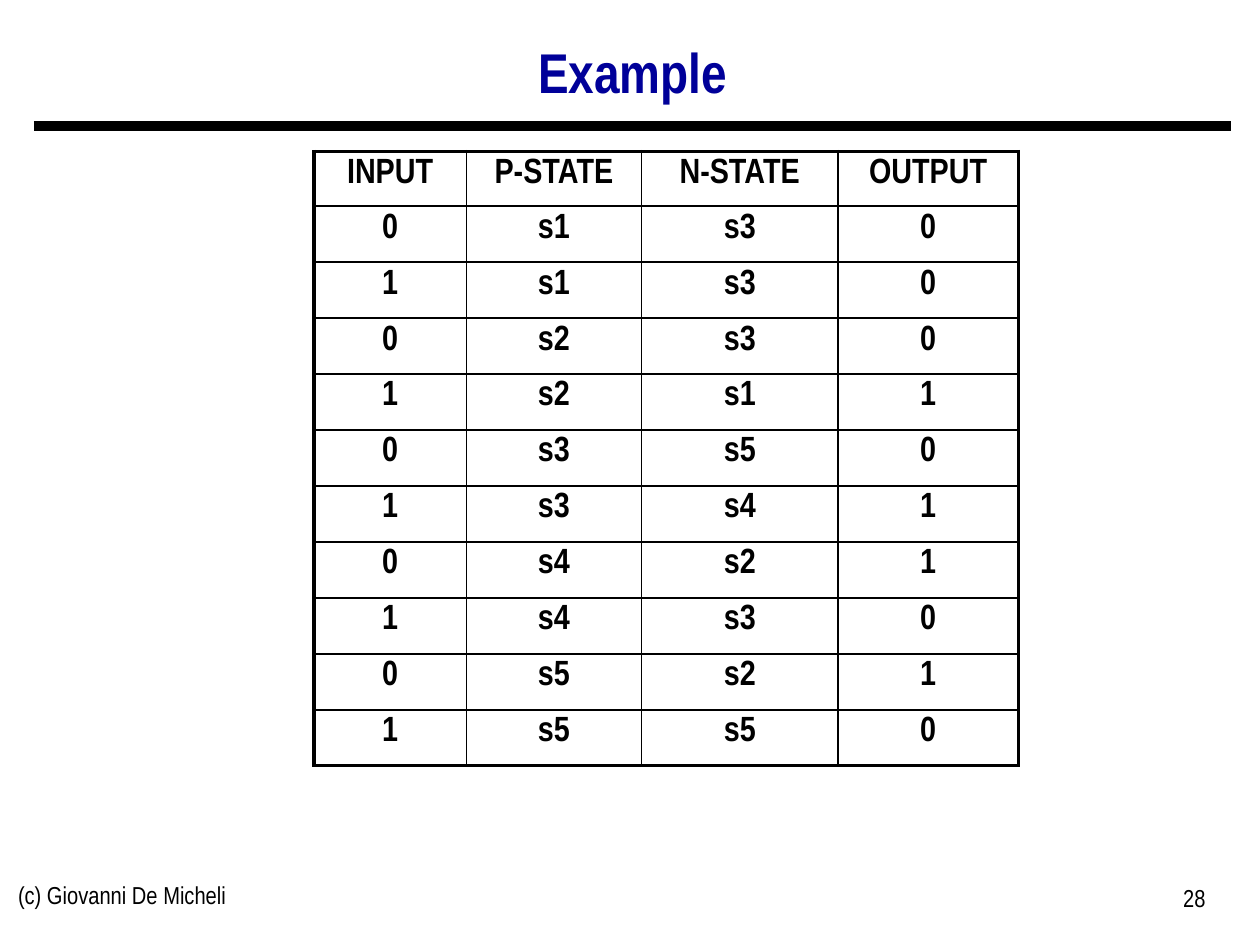
from lxml import etree
from pptx import Presentation
from pptx import util as u
from pptx.dml.color import RGBColor
from pptx.enum import shapes, text
from pptx.oxml.ns import qn

Pt = u.Pt
COLORS = {"ink": "000000", "title": "000099"}
FONT = "Arial Narrow"
LEFT, CENTER, RIGHT = text.PP_ALIGN.LEFT, text.PP_ALIGN.CENTER, text.PP_ALIGN.RIGHT


def write(tf, content, size=14, color="ink", bold=False, align=LEFT, spacing=None):
    p = tf.paragraphs[0]
    p.alignment = align
    if spacing:
        p.line_spacing = spacing
    r = p.add_run()
    r.text = content
    r.font.name, r.font.size, r.font.bold = FONT, Pt(size), bold
    r.font.color.rgb = RGBColor.from_string(COLORS[color])


class Deck:
    thin, thick = 1, 2.25

    def __init__(self, width, height):
        self.prs = Presentation()
        self.prs.slide_width, self.prs.slide_height = Pt(width), Pt(height)
        self.s = self.prs.slides.add_slide(self.prs.slide_layouts[6])

    def rule(self, x1, x2, y, width):
        sp = self.s.shapes.add_connector(
            shapes.MSO_CONNECTOR.STRAIGHT, Pt(x1), Pt(y), Pt(x2), Pt(y))
        sp.line.width = Pt(width)
        sp.line.color.rgb = RGBColor.from_string(COLORS["ink"])
        etree.SubElement(sp.line._get_or_add_ln().getparent(), qn("a:effectLst"))

    def label(self, box, content, anchor=text.MSO_ANCHOR.TOP, **fmt):
        tf = self.s.shapes.add_textbox(*map(Pt, box)).text_frame
        tf.word_wrap = True
        tf.vertical_anchor = anchor
        write(tf, content, **fmt)

    def border(self, cell, side, width):
        tc_pr = cell._tc.get_or_add_tcPr()
        ln = etree.SubElement(tc_pr, qn("a:ln" + side), w=str(Pt(width)))
        fill = etree.SubElement(ln, qn("a:solidFill"))
        etree.SubElement(fill, qn("a:srgbClr"), val=COLORS["ink"])

    def table(self, x, y, widths, heights, rows, **fmt):
        frame = self.s.shapes.add_table(
            len(rows), len(widths), Pt(x), Pt(y), Pt(sum(widths)), Pt(sum(heights)))
        tbl = frame.table
        tbl.first_row = tbl.horz_banding = False
        for col, width in zip(tbl.columns, widths):
            col.width = Pt(width)
        for row, height in zip(tbl.rows, heights):
            row.height = Pt(height)
        for i, values in enumerate(rows):
            for j, value in enumerate(values):
                cell = tbl.cell(i, j)
                write(cell.text_frame, value, **fmt)
                # Thick outer frame, thin inner grid
                outer = {"L": j == 0, "R": j == len(widths) - 1,
                         "T": i == 0, "B": i == len(rows) - 1}
                for side, is_outer in outer.items():
                    self.border(cell, side, self.thick if is_outer else self.thin)
                cell.fill.background()


def main():
    deck = Deck(720, 540)

    # Rule and footer
    deck.rule(19.44, 703.44, 72, 6)
    deck.label((3.2, 499.3, 228, 37.5), "(c) Giovanni De Micheli")
    deck.label((528.2, 501, 167.75, 37.5), "28", align=RIGHT)

    # Title
    deck.label((19.2, 15.84, 684.72, 54), "Example", text.MSO_ANCHOR.MIDDLE,
               size=32, color="title", bold=True, align=CENTER, spacing=0.9)

    # State transition table: two inputs for each present state
    transitions = {"s1": ("s3 0", "s3 0"), "s2": ("s3 0", "s1 1"),
                   "s3": ("s5 0", "s4 1"), "s4": ("s2 1", "s3 0"),
                   "s5": ("s2 1", "s5 0")}
    rows = [["INPUT", "P-STATE", "N-STATE", "OUTPUT"]]
    for state, results in transitions.items():
        for bit, result in enumerate(results):
            rows.append([str(bit), state, *result.split()])
    deck.table(179.4, 86.6, [87.12, 100.08, 112.32, 102.96], [30.9] + [32] * 10, rows,
               size=20, bold=True, align=CENTER)

    deck.prs.save("out.pptx")


if __name__ == "__main__":
    main()
